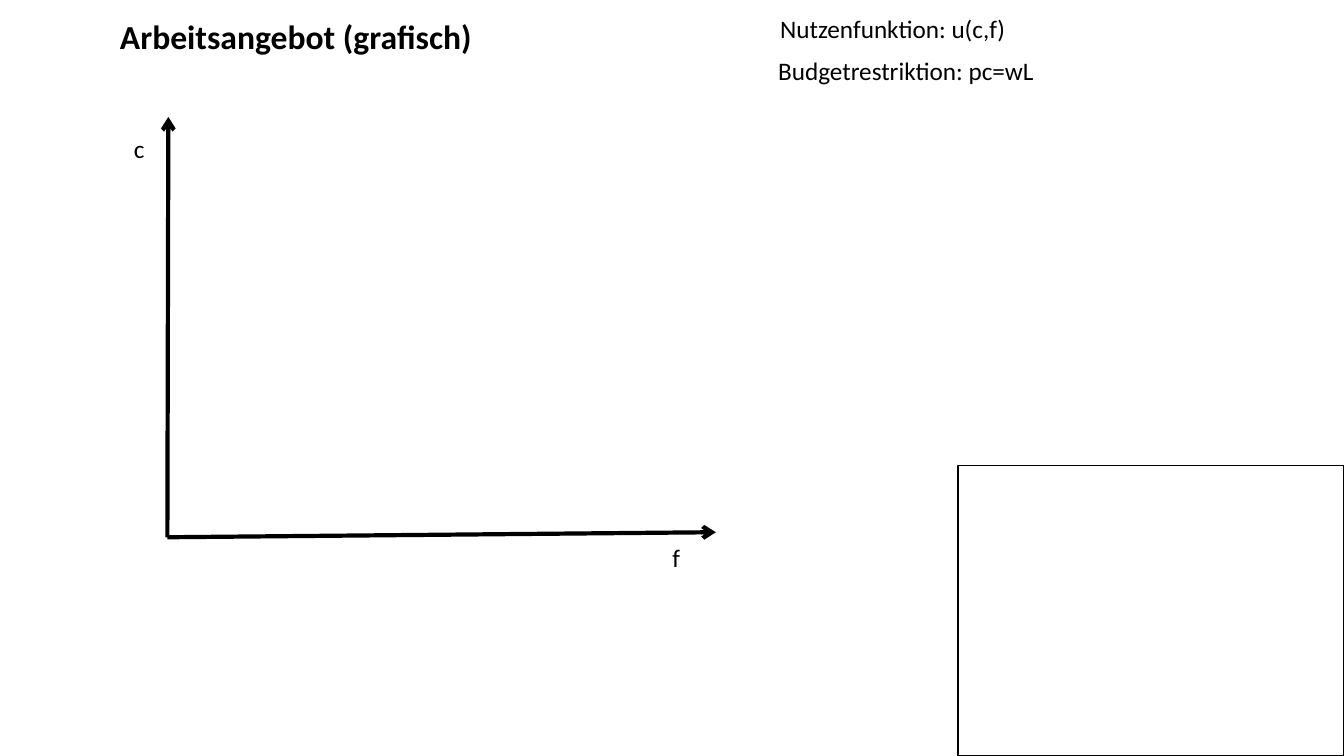
import dataclasses

import lxml.etree
import pptx
import pptx.dml.color
import pptx.enum.shapes
import pptx.enum.text
import pptx.oxml.ns
import pptx.shapes.autoshape
import pptx.slide
import pptx.util

Inches = pptx.util.Inches
COLORS = {"ink": "000000"}
FONT = "Calibri"


@dataclasses.dataclass(frozen=True)
class Label:
    text: str
    left: float
    top: float
    width: float
    wrap: bool = False
    height: float = 0.4
    size: int = 18
    bold: bool = False


@dataclasses.dataclass(frozen=True)
class Axis:
    end_x: float
    end_y: float


ORIGIN_X, ORIGIN_Y = 1.66, 5.33
TITLE = Label("Arbeitsangebot (grafisch)", 1.09, 0.11, 3.71, height=0.5, size=24, bold=True)
LABELS = [
    Label("c", 1.23, 1.27, 0.87, wrap=True),
    Label("f", 6.57, 5.33, 0.28),
    Label("Budgetrestriktion: pc=wL", 7.62, 0.5, 2.77),
    Label("Nutzenfunktion: u(c,f)", 7.64, 0.08, 2.46),
]
AXES = [Axis(7.1, 5.28), Axis(1.67, 1.16)]


def ink() -> pptx.dml.color.RGBColor:
    return pptx.dml.color.RGBColor.from_string(COLORS["ink"])


def write_label(shape: pptx.shapes.autoshape.Shape, label: Label) -> None:
    shape.left, shape.top = Inches(label.left), Inches(label.top)
    shape.width, shape.height = Inches(label.width), Inches(label.height)
    text_frame = shape.text_frame
    text_frame.text = label.text
    text_frame.word_wrap = label.wrap
    text_frame.auto_size = pptx.enum.text.MSO_AUTO_SIZE.SHAPE_TO_FIT_TEXT
    text_frame.vertical_anchor = pptx.enum.text.MSO_ANCHOR.TOP
    paragraph = text_frame.paragraphs[0]
    paragraph.alignment = pptx.enum.text.PP_ALIGN.LEFT
    font = paragraph.runs[0].font
    font.name = FONT
    font.size = pptx.util.Pt(label.size)
    font.bold = label.bold
    font.color.rgb = ink()


def add_label(slide: pptx.slide.Slide, label: Label) -> None:
    shape = slide.shapes.add_textbox(0, 0, Inches(label.width), Inches(label.height))
    write_label(shape, label)


def add_axis(slide: pptx.slide.Slide, axis: Axis) -> None:
    connector = slide.shapes.add_connector(
        pptx.enum.shapes.MSO_CONNECTOR.STRAIGHT,
        Inches(ORIGIN_X), Inches(ORIGIN_Y), Inches(axis.end_x), Inches(axis.end_y),
    )
    connector.line.color.rgb = ink()
    connector.line.width = pptx.util.Pt(3)
    qualified = pptx.oxml.ns.qn
    properties = connector.element.spPr
    line = properties.find(qualified("a:ln"))
    lxml.etree.SubElement(line, qualified("a:tailEnd"), type="arrow")
    lxml.etree.SubElement(properties, qualified("a:effectLst"))


def add_frame(slide: pptx.slide.Slide) -> None:
    shape = slide.shapes.add_shape(
        pptx.enum.shapes.MSO_SHAPE.RECTANGLE,
        Inches(9.5), Inches(4.62), Inches(3.83), Inches(2.88),
    )
    shape.shadow.inherit = False
    shape.fill.background()
    shape.line.color.rgb = ink()
    shape.line.width = pptx.util.Pt(1)


def main() -> None:
    presentation = pptx.Presentation()
    presentation.slide_width = Inches(13.33)
    presentation.slide_height = Inches(7.5)
    title_only = presentation.slide_layouts.get_by_name("Title Only")
    slide = presentation.slides.add_slide(title_only)
    add_frame(slide)
    write_label(slide.shapes.title, TITLE)
    for axis in AXES:
        add_axis(slide, axis)
    for label in LABELS:
        add_label(slide, label)
    presentation.save("out.pptx")


if __name__ == "__main__":
    main()
